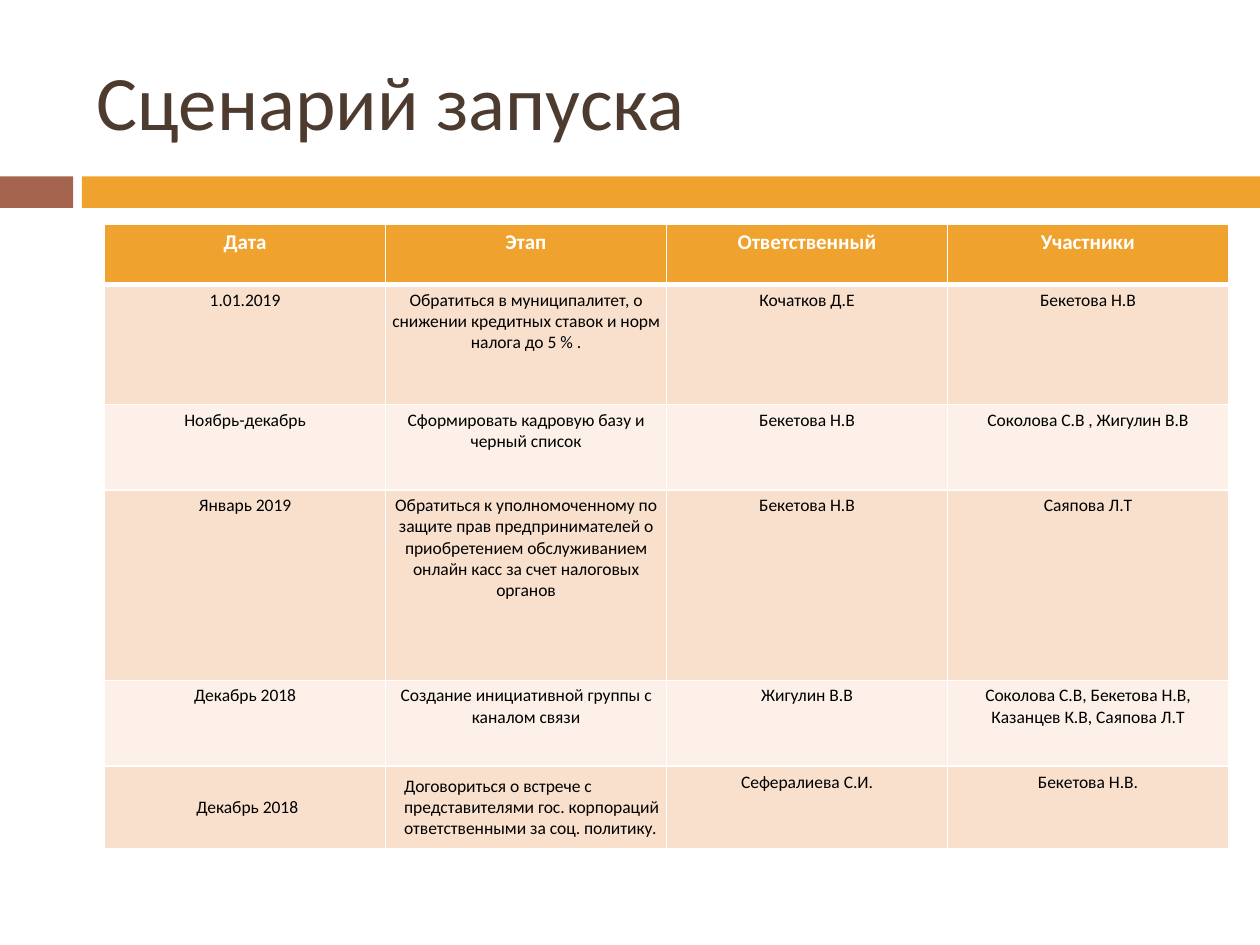
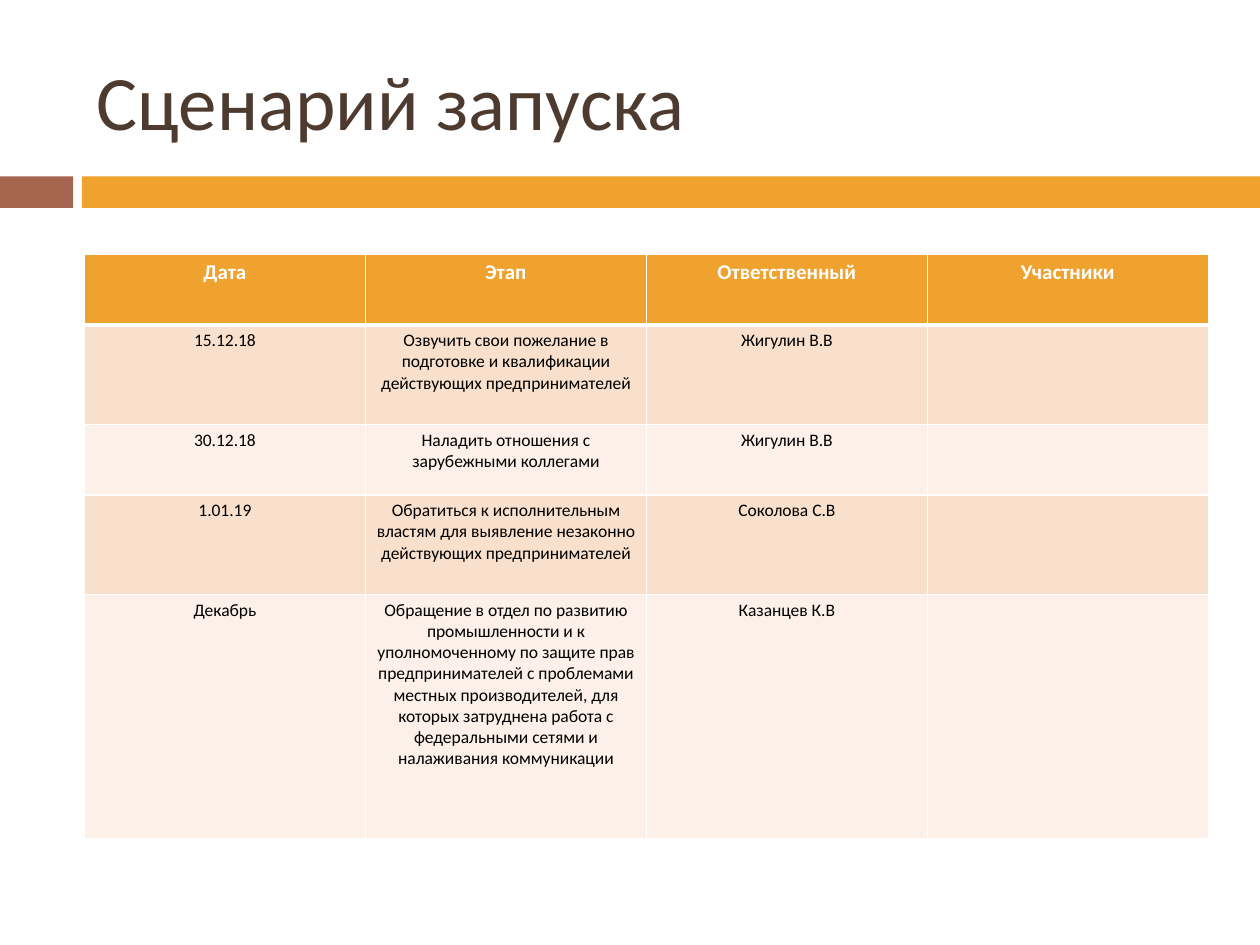
from lxml.etree import SubElement as Sub
from pptx import Presentation
from pptx.dml.color import RGBColor as RGB
from pptx.enum.shapes import MSO_SHAPE as Shape
from pptx.enum.text import MSO_ANCHOR as Anchor, MSO_AUTO_SIZE as Fit, PP_ALIGN as Align
from pptx.oxml.ns import qn
from pptx.util import Inches, Pt

# Shared look
FONT = "Calibri"
BROWN, RUST, GOLD = "4E3B30", "A5644E", "F0A22E"
WHITE, BLACK = "FFFFFF", "000000"
BANDS = ("FCF0E8", "F9E0CD")
TITLE = "Сценарий запуска"
HEADS = ("Дата", "Этап", "Ответственный", "Участники")
COL = 2.23

# Table contents
FIRST = [
    ("1.01.2019",
     "Обратиться в муниципалитет, о снижении кредитных ставок и норм налога до 5 % .",
     "Кочатков Д.Е", "Бекетова Н.В"),
    ("Ноябрь-декабрь", "Сформировать кадровую базу и черный список",
     "Бекетова Н.В", "Соколова С.В , Жигулин В.В"),
    ("Январь 2019",
     "Обратиться к уполномоченному по защите прав предпринимателей о приобретением "
     "обслуживанием онлайн касс за счет налоговых органов",
     "Бекетова Н.В", "Саяпова Л.Т"),
    ("Декабрь 2018", "Создание инициативной группы с каналом связи",
     "Жигулин В.В", "Соколова С.В, Бекетова Н.В, Казанцев К.В, Саяпова Л.Т"),
    ("", "", "Сефералиева С.И.", "Бекетова Н.В."),
]
SECOND = [
    ("15.12.18",
     "Озвучить свои пожелание в подготовке и квалификации действующих предпринимателей",
     "Жигулин В.В", ""),
    ("30.12.18", "Наладить отношения с зарубежными коллегами", "Жигулин В.В", ""),
    ("1.01.19",
     "Обратиться к исполнительным властям для выявление незаконно действующих "
     "предпринимателей",
     "Соколова С.В", ""),
    ("Декабрь",
     "Обращение в отдел по развитию промышленности и к уполномоченному по защите прав "
     "предпринимателей с проблемами местных производителей, для которых затруднена "
     "работа с федеральными сетями и налаживания коммуникации",
     "Казанцев К.В", ""),
]


def paint(fill, color):
    fill.solid()
    fill.fore_color.rgb = RGB.from_string(color)


def style(para, size, color, bold=False):
    font = para.font
    font.name, font.size, font.bold = FONT, Pt(size), bold
    font.color.rgb = RGB.from_string(color)


def add_band(slide, left, width, color):
    band = slide.shapes.add_shape(
        Shape.RECTANGLE, Inches(left), Inches(1.4), Inches(width), Inches(0.25))
    band.shadow.inherit = False
    paint(band.fill, color)
    band.line.fill.background()


def add_text(slide, box, lines, size, color):
    frame = slide.shapes.add_textbox(*map(Inches, box)).text_frame
    frame.text = "\n".join(lines)
    for para in frame.paragraphs:
        style(para, size, color)
    return frame


def add_note(slide, box, *lines):
    frame = add_text(slide, box, lines, 10, BLACK)
    frame.word_wrap = False
    frame.auto_size = Fit.SHAPE_TO_FIT_TEXT


def add_page(deck):
    slide = deck.slides.add_slide(deck.slide_layouts[6])
    add_band(slide, 0, 0.58, RUST)
    add_band(slide, 0.65, 9.35, GOLD)
    frame = add_text(slide, (0.67, 0.25, 8.92, 1.08), [TITLE], 44, BROWN)
    frame.word_wrap = True
    frame.vertical_anchor = Anchor.MIDDLE
    return slide


def set_edge(cell, side, width):
    props = cell._tc.get_or_add_tcPr()
    line = Sub(props, qn("a:ln" + side), w=str(Pt(width)))
    Sub(Sub(line, qn("a:solidFill")), qn("a:srgbClr"), val=WHITE)


def fill_cell(cell, text, row):
    head = row == 0
    for side in "LRTB":
        thick = (row, side) in ((0, "B"), (1, "T"))
        set_edge(cell, side, 3 if thick else 1)
    paint(cell.fill, GOLD if head else BANDS[row % 2])
    cell.margin_left = cell.margin_right = Inches(0.04)
    cell.margin_top = cell.margin_bottom = Inches(0.04)
    cell.text = text
    para = cell.text_frame.paragraphs[0]
    para.alignment = Align.CENTER
    para.space_after = Pt(10)
    style(para, 12 if head else 10, WHITE if head else BLACK, head)


def add_plan(slide, left, top, heights, body):
    frame = slide.shapes.add_table(
        len(heights), len(HEADS), Inches(left), Inches(top),
        Inches(COL * len(HEADS)), Inches(sum(heights)))
    table = frame.table
    for col in table.columns:
        col.width = Inches(COL)
    for row, (high, texts) in enumerate(zip(heights, [HEADS, *body])):
        table.rows[row].height = Inches(high)
        for col, text in enumerate(texts):
            fill_cell(table.cell(row, col), text, row)
    return table


def loosen(row):
    for cell in row.cells:
        cell.margin_left = cell.margin_right = Inches(0.1)
        cell.margin_top = cell.margin_bottom = Inches(0.05)
        cell.text_frame.paragraphs[0].space_after = Pt(0)


def main():
    deck = Presentation()
    deck.slide_width, deck.slide_height = Inches(10), Inches(7.5)

    # First part of the plan, with two notes over the last row
    slide = add_page(deck)
    table = add_plan(slide, 0.83, 1.78, (0.48, 0.95, 0.68, 1.51, 0.68, 0.66), FIRST)
    loosen(table.rows[5])
    add_note(slide, (1.46, 6.27, 1.06, 0.27), "Декабрь 2018")
    add_note(slide, (3.11, 6.1, 2.26, 0.61), "Договориться о встрече с",
             "представителями гос. корпораций", "ответственными за соц. политику.")

    # Second part of the plan
    slide = add_page(deck)
    add_plan(slide, 0.67, 2.02, (0.56, 0.79, 0.56, 0.79, 1.94), SECOND)

    deck.save("out.pptx")


if __name__ == "__main__":
    main()
